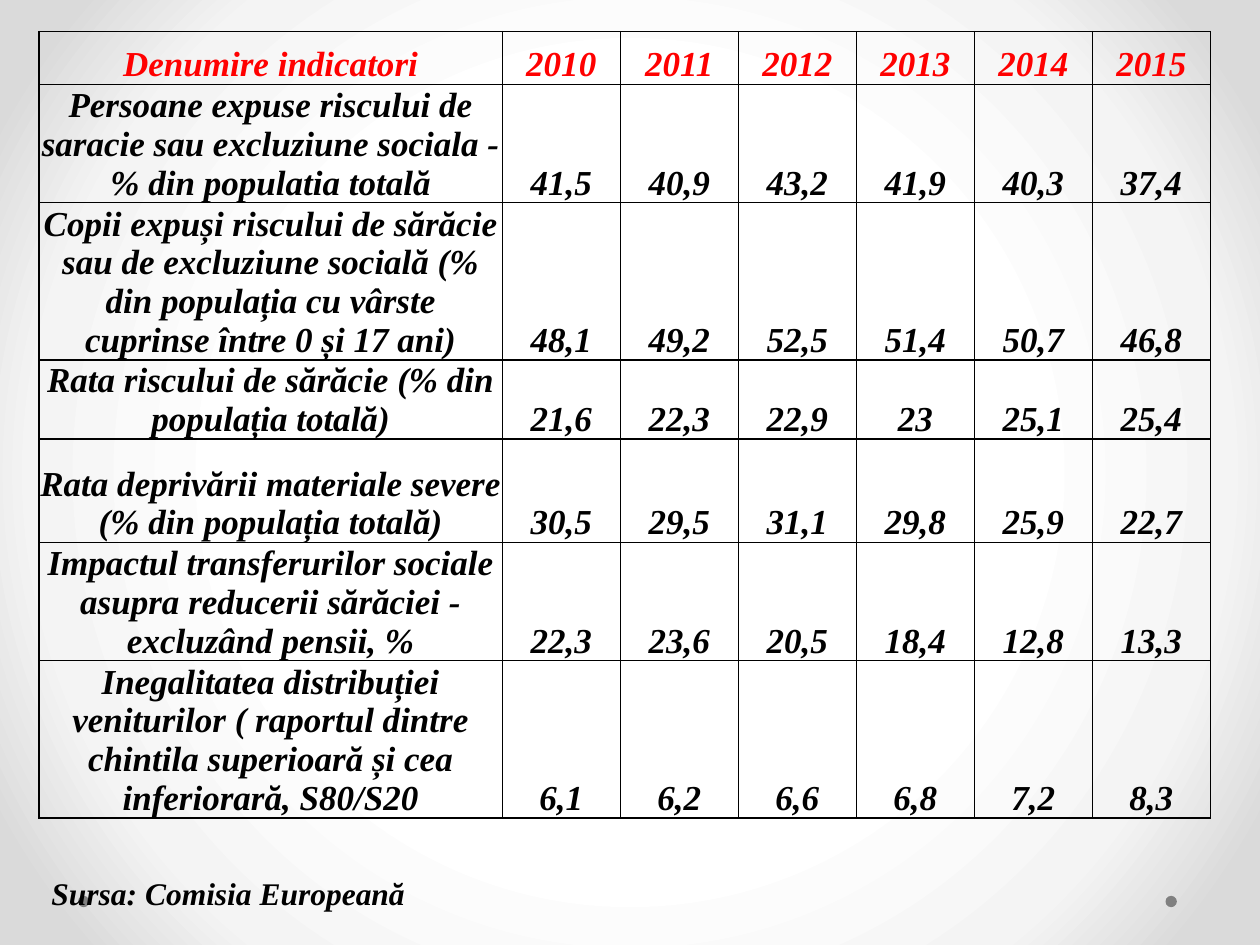
from lxml import etree
from pptx import Presentation
from pptx import oxml
from pptx.dml.color import RGBColor
from pptx.enum import shapes, text
from pptx.oxml import ns
from pptx.util import Pt

BLACK = RGBColor(0, 0, 0)
RED = RGBColor(255, 0, 0)
GRAY = RGBColor(128, 128, 128)
GRADIENT = [(50, "FFFFFF"), (76, "F4F4F4"), (92, "DADADA")]
BORDER = (
    '<a:{side} {ns} w="12700"><a:solidFill><a:srgbClr val="000000"/></a:solidFill></a:{side}>'
)

indicators = [
    ("Denumire indicatori", 30.2, "2010 2011 2012 2013 2014 2015"),
    ("Persoane expuse riscului de saracie sau excluziune sociala - % din populatia totală",
     67.6, "41,5 40,9 43,2 41,9 40,3 37,4"),
    ("Copii expuși riscului de sărăcie sau de excluziune socială (% din populația cu vârste "
     "cuprinse între 0 și 17 ani)", 90, "48,1 49,2 52,5 51,4 50,7 46,8"),
    ("Rata riscului de sărăcie (% din populația totală)",
     45.2, "21,6 22,3 22,9 23 25,1 25,4"),
    ("Rata deprivării materiale severe (% din populația totală)",
     59, "30,5 29,5 31,1 29,8 25,9 22,7"),
    ("Impactul transferurilor sociale asupra reducerii sărăciei - excluzând pensii, %",
     67.6, "22,3 23,6 20,5 18,4 12,8 13,3"),
    ("Inegalitatea distribuției veniturilor ( raportul dintre chintila superioară și cea "
     "inferiorară, S80/S20", 90, "6,1 6,2 6,6 6,8 7,2 8,3"),
]
column_widths = [264.7] + [67.45] * 6


def write(paragraph, wording, size, color):
    run = paragraph.add_run()
    run.text = wording
    styling = {"name": "Times New Roman", "size": Pt(size), "bold": True, "italic": True}
    for key, value in styling.items():
        setattr(run.font, key, value)
    run.font.color.rgb = color


deck = Presentation()
deck.slide_width, deck.slide_height = Pt(720), Pt(540)
slide = deck.slides.add_slide(deck.slide_layouts[6])

stops = "".join(
    f'<a:gs pos="{position * 1000}"><a:srgbClr val="{color}"/></a:gs>'
    for position, color in GRADIENT
)
slide.element.cSld.insert(0, oxml.parse_xml(
    f'<p:bg {ns.nsdecls("p", "a")}><p:bgPr><a:gradFill rotWithShape="1">'
    f'<a:gsLst>{stops}</a:gsLst><a:path path="circle">'
    '<a:fillToRect l="50000" t="50000" r="50000" b="50000"/></a:path>'
    '</a:gradFill><a:effectLst/></p:bgPr></p:bg>'
))

for dot_left in (666, 44.6):
    dot = slide.shapes.add_shape(
        shapes.MSO_SHAPE.OVAL, Pt(dot_left), Pt(511.9), Pt(6.5), Pt(6.5))
    dot.shadow.inherit = False
    dot.fill.solid()
    dot.fill.fore_color.rgb = GRAY
    dot.line.fill.background()

poverty = slide.shapes.add_table(
    len(indicators), len(column_widths), Pt(22.3), Pt(18),
    Pt(sum(column_widths)), Pt(sum(height for _, height, _ in indicators))).table
for column, width in zip(poverty.columns, column_widths):
    column.width = Pt(width)

cell_format = {
    "vertical_anchor": text.MSO_ANCHOR.BOTTOM,
    "margin_left": Pt(0.7),
    "margin_right": Pt(0.7),
    "margin_top": Pt(0.7),
    "margin_bottom": Pt(0),
}
for row, (indicator, height, figures) in enumerate(indicators):
    poverty.rows[row].height = Pt(height)
    for col, wording in enumerate([indicator] + figures.split()):
        cell = poverty.cell(row, col)
        for key, value in cell_format.items():
            setattr(cell, key, value)
        properties = cell._tc.get_or_add_tcPr()
        for side in ("lnL", "lnR", "lnT", "lnB"):
            properties.append(etree.fromstring(
                BORDER.format(side=side, ns=ns.nsdecls("a")), oxml.oxml_parser))
        cell.fill.background()
        paragraph = cell.text_frame.paragraphs[0]
        paragraph.alignment = text.PP_ALIGN.CENTER
        write(paragraph, wording, 20, BLACK if row else RED)

source = slide.shapes.add_textbox(Pt(22.3), Pt(496), Pt(250), Pt(29)).text_frame
source.word_wrap = True
source.auto_size = text.MSO_AUTO_SIZE.SHAPE_TO_FIT_TEXT
write(source.paragraphs[0], "Sursa: Comisia Europeană", 18, BLACK)

deck.save("out.pptx")
